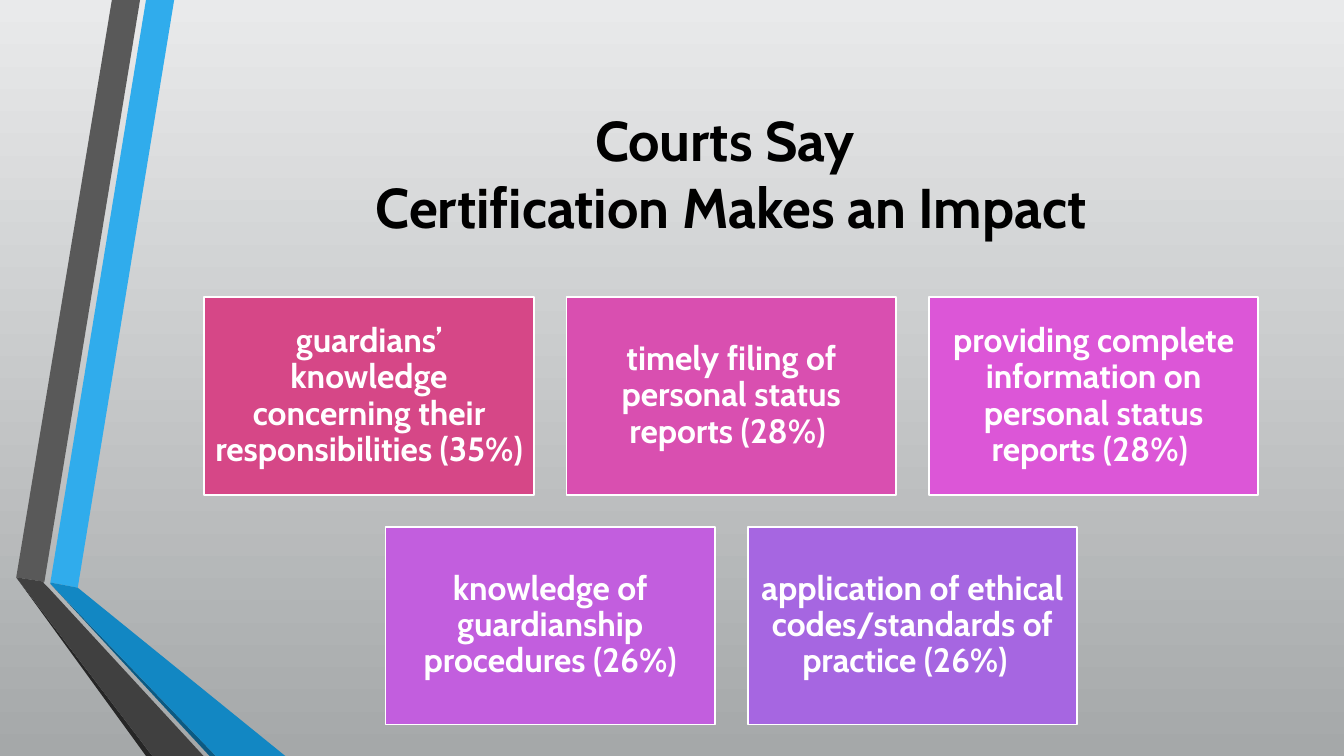
from dataclasses import dataclass

from pptx import Presentation
from pptx import util as u
from pptx.dml.color import RGBColor
from pptx.enum import text

FONT = "Cabin"
BLACK = RGBColor(0x00, 0x00, 0x00)
WHITE = RGBColor(0xFF, 0xFF, 0xFF)
BG_TOP = RGBColor(0xE9, 0xEA, 0xEB)
BG_BOTTOM = RGBColor(0xA5, 0xA8, 0xA9)
BLUE = RGBColor(0x30, 0xAC, 0xEC)
DEEP_BLUE = RGBColor(0x12, 0x87, 0xC3)
NAVY = RGBColor(0x0C, 0x5A, 0x82)
GREY = RGBColor(0x59, 0x59, 0x59)
DARK_GREY = RGBColor(0x40, 0x40, 0x40)
CHARCOAL = RGBColor(0x26, 0x26, 0x26)
ROSE = RGBColor(0xD6, 0x47, 0x87)
PINK = RGBColor(0xD9, 0x4F, 0xB0)
MAGENTA = RGBColor(0xDC, 0x56, 0xD7)
ORCHID = RGBColor(0xC2, 0x5E, 0xDE)
VIOLET = RGBColor(0xA6, 0x66, 0xE1)

SLIDE_W, SLIDE_H = 33.87, 19.05
CARD_W, CARD_H = 8.3, 4.98
PITCH_X, PITCH_Y = 9.13, 5.79
CARDS_CENTER, CARDS_TOP = 18.43, 7.49


@dataclass
class Ribbon:
    color: RGBColor
    points: list[tuple[float, float]]


@dataclass
class Card:
    label: str
    color: RGBColor


RIBBONS = [
    Ribbon(BLUE, [(1.27, 14.68), (1.96, 14.81), (4.39, 0), (3.68, 0)]),
    Ribbon(GREY, [(3.53, 0), (2.82, 0), (0.41, 14.55), (1.12, 14.66)]),
    Ribbon(CHARCOAL, [(0.41, 14.55), (3.68, SLIDE_H), (3.84, SLIDE_H)]),
    Ribbon(NAVY, [(1.27, 14.71), (5.28, SLIDE_H), (5.44, SLIDE_H)]),
    Ribbon(DEEP_BLUE, [(1.27, 14.71), (5.44, SLIDE_H), (7.19, SLIDE_H),
                       (1.96, 14.81), (1.27, 14.68)]),
    Ribbon(DARK_GREY, [(5.13, SLIDE_H), (1.22, 14.81), (1.09, 14.68),
                       (1.12, 14.66), (0.41, 14.55), (3.84, SLIDE_H)]),
]

CARD_ROWS = [
    [
        Card("guardians’ knowledge concerning their responsibilities (35%) ", ROSE),
        Card("timely filing of personal status reports (28%) ", PINK),
        Card("providing complete information on personal status reports (28%) ", MAGENTA),
    ],
    [
        Card("knowledge of guardianship procedures (26%)", ORCHID),
        Card("application of ethical codes/standards of practice (26%)  ", VIOLET),
    ],
]


def write(sp, content: str, *, size: float, color: RGBColor,
          spacing: float = 1.0, inset: float = 0.25) -> None:
    tf = sp.text_frame
    tf.word_wrap = True
    tf.auto_size = text.MSO_AUTO_SIZE.NONE
    tf.vertical_anchor = text.MSO_ANCHOR.MIDDLE
    tf.margin_left = tf.margin_right = u.Cm(0.25)
    tf.margin_top = tf.margin_bottom = u.Cm(inset)
    p = tf.paragraphs[0]
    p.text = content
    p.alignment = text.PP_ALIGN.CENTER
    p.line_spacing = spacing
    for r in p.runs:
        r.font.name = FONT
        r.font.size = u.Pt(size)
        r.font.bold = True
        r.font.color.rgb = color


def draw_ribbon(s, ribbon: Ribbon) -> None:
    start, *rest = [(u.Cm(x), u.Cm(y)) for x, y in ribbon.points]
    builder = s.shapes.build_freeform(*start)
    builder.add_line_segments(rest, close=True)
    sp = builder.convert_to_shape()
    sp.shadow.inherit = False
    sp.fill.solid()
    sp.fill.fore_color.rgb = ribbon.color
    sp.line.fill.background()


def draw_card(s, card: Card, left: float, top: float) -> None:
    sp = s.shapes.add_shape(1, u.Cm(left), u.Cm(top), u.Cm(CARD_W), u.Cm(CARD_H))
    sp.shadow.inherit = False
    sp.fill.solid()
    sp.fill.fore_color.rgb = card.color
    sp.line.color.rgb = WHITE
    sp.line.width = u.Pt(1.25)
    write(sp, card.label, size=24, color=WHITE, spacing=0.9)


def paint_background(s) -> None:
    fill = s.background.fill
    fill.gradient()
    fill.gradient_angle = 270
    for stop, color in zip(fill.gradient_stops, (BG_TOP, BG_BOTTOM)):
        stop.color.rgb = color


def main() -> None:
    prs = Presentation()
    prs.slide_width, prs.slide_height = u.Cm(SLIDE_W), u.Cm(SLIDE_H)
    s = prs.slides.add_slide(prs.slide_layouts[5])
    paint_background(s)

    for ribbon in RIBBONS:
        draw_ribbon(s, ribbon)

    title = s.shapes.title
    title.left, title.top = u.Cm(4.9), u.Cm(1.9)
    title.width, title.height = u.Cm(27.05), u.Cm(4.88)
    write(title, "Courts Say \vCertification Makes an Impact",
          size=40, color=BLACK, inset=0.13)

    for row, cards in enumerate(CARD_ROWS):
        left = CARDS_CENTER - ((len(cards) - 1) * PITCH_X + CARD_W) / 2
        for col, card in enumerate(cards):
            draw_card(s, card, left + col * PITCH_X, CARDS_TOP + row * PITCH_Y)

    prs.save("out.pptx")


if __name__ == "__main__":
    main()
